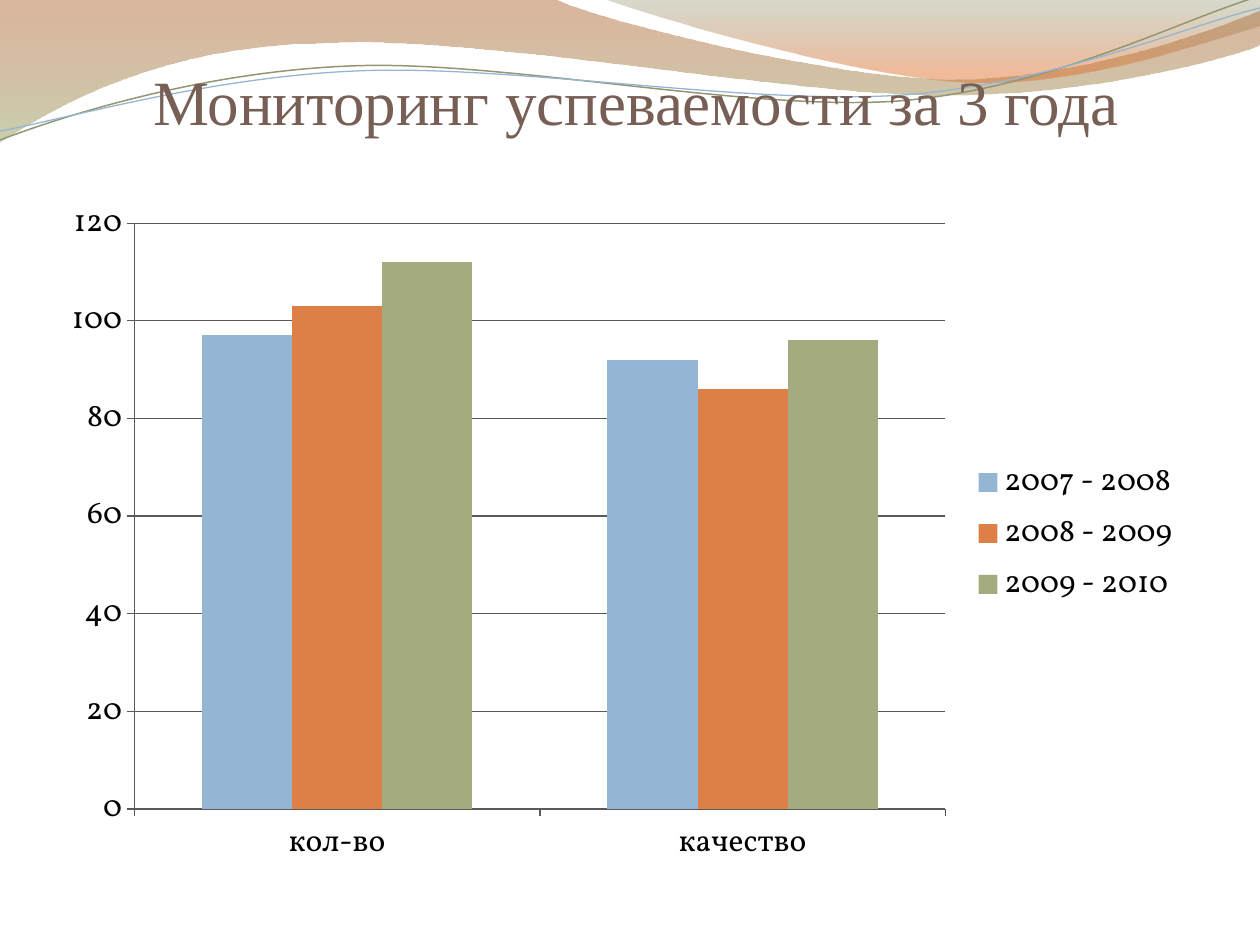
from pptx import Presentation
from pptx.chart.data import CategoryChartData as Data
from pptx.dml.color import RGBColor as RGB
from pptx.enum.chart import XL_CHART_TYPE as Kind, XL_LEGEND_POSITION as Side, XL_TICK_MARK as Tick
from pptx.enum.text import MSO_ANCHOR as Anchor, PP_ALIGN as Align
from pptx.oxml.ns import qn
from pptx.util import Pt
from lxml import etree

PX = 914400 / 126
HUES = {
    "rust": "AF5C29", "moss": "9DA66B", "sage": "7D835B", "flame": "DD6B24",
    "olive": "929772", "blue": "94B6D2", "orange": "DD8047", "green": "A5AB81",
    "brown": "775F55", "black": "000000", "grey": "595959",
}


def hue(name):
    return RGB.from_string(HUES[name])


def draw(start, steps, close):
    pen = slide.shapes.build_freeform(*start, scale=PX)
    dots = [step[i:i + 2] for step in steps for i in range(0, len(step), 2)]
    pen.add_line_segments(dots, close=close)
    shape = pen.convert_to_shape()
    shape.shadow.inherit = False
    lines = iter(list(shape._element.iter(qn("a:lnTo"))))
    for step in steps:
        first = next(lines)
        if len(step) == 6:
            first.tag_name = None
            bend = etree.Element(qn("a:cubicBezTo"))
            first.addprevious(bend)
            for part in (first, next(lines), next(lines)):
                bend.append(part[0])
                part.getparent().remove(part)
    return shape


deck = Presentation()
deck.slide_width = round(1260 * PX)
deck.slide_height = round(945 * PX)
slide = deck.slides.add_slide(deck.slide_layouts[6])

waves = [
    ((0, 0), [(554, -1), (600, 21, 837, 79, 955, 79), (1075, 79, 1207, 33, 1260, 11),
              (1261, 45), (1239, 55, 1096, 96, 940, 95), (784, 95, 481, 35, 324, 43),
              (163, 45, 58, 105, -1, 142), (0, 0)],
     [("rust", 0, 45), ("moss", 1, 55)]),
    ((604, -1), [(641, 14, 859, 78, 969, 82), (1079, 87, 1211, 40, 1260, 26),
                 (1260, 0), (604, -1)],
     [("sage", 0, 30), ("flame", 0.8, 45)]),
]
for start, steps, stops in waves:
    wave = draw(start, steps, True)
    wave.line.fill.background()
    wave.fill.gradient()
    wave.fill.gradient_angle = 270
    for stop, (name, place, alpha) in zip(wave.fill.gradient_stops, stops):
        stop.color.rgb = hue(name)
        stop.position = place
    for tint, (name, place, alpha) in zip(wave._element.spPr.iter(qn("a:srgbClr")), stops):
        etree.SubElement(tint, qn("a:alpha")).set("val", str(alpha * 1000))

curves = [
    ((0, 140), [(60, 117, 199, 72, 349, 66), (498, 59, 747, 112, 898, 101),
                (1050, 89, 1182, 19, 1257, -3)], "olive", 0.85),
    ((0, 131), [(59, 121, 207, 77, 357, 71), (508, 64, 752, 106, 903, 95),
                (1053, 84, 1186, 26, 1260, 8)], "blue", 0.75),
]
for start, steps, name, width in curves:
    curve = draw(start, steps, False)
    curve.fill.background()
    curve.line.color.rgb = hue(name)
    curve.line.width = Pt(width)

title = slide.shapes.add_textbox(*[round(n * PX) for n in (69, 40, 1134, 98)])
frame = title.text_frame
frame.word_wrap = True
frame.vertical_anchor = Anchor.BOTTOM
frame.margin_left = frame.margin_right = frame.margin_bottom = 0
frame.margin_top = round(6 * PX)
line = frame.paragraphs[0]
line.alignment = Align.CENTER
run = line.add_run()
run.text = "Мониторинг успеваемости за 3 года"
run.font.name = "Times New Roman"
run.font.size = Pt(36)
run.font.color.rgb = hue("brown")

years = [
    ("2007 - 2008", (97, 92), "blue"),
    ("2008 - 2009", (103, 86), "orange"),
    ("2009 - 2010", (112, 96), "green"),
]
data = Data()
data.categories = ["кол-во", "качество"]
for name, marks, tint in years:
    data.add_series(name, marks)
box = [round(n * PX) for n in (49, 187, 1144, 693)]
chart = slide.shapes.add_chart(Kind.COLUMN_CLUSTERED, *box, data).chart
chart.has_title = False
chart.font.name = "Vollkorn"
chart.font.size = Pt(18)
chart.font.color.rgb = hue("black")
chart.has_legend = True
chart.legend.position = Side.RIGHT
chart.legend.include_in_layout = False

plot = chart.plots[0]
plot.gap_width = 150
plot.overlap = 0
plot.vary_by_categories = False
for bars, (name, marks, tint) in zip(plot.series, years):
    bars.format.fill.solid()
    bars.format.fill.fore_color.rgb = hue(tint)

scale = chart.value_axis
scale.minimum_scale = 0
scale.maximum_scale = 120
scale.major_unit = 20
scale.has_major_gridlines = True
for axis in (scale, chart.category_axis):
    axis.major_tick_mark = Tick.OUTSIDE
    axis.minor_tick_mark = Tick.NONE
for part in (scale, chart.category_axis, scale.major_gridlines):
    part.format.line.color.rgb = hue("grey")
    part.format.line.width = Pt(0.75)

deck.save("out.pptx")
